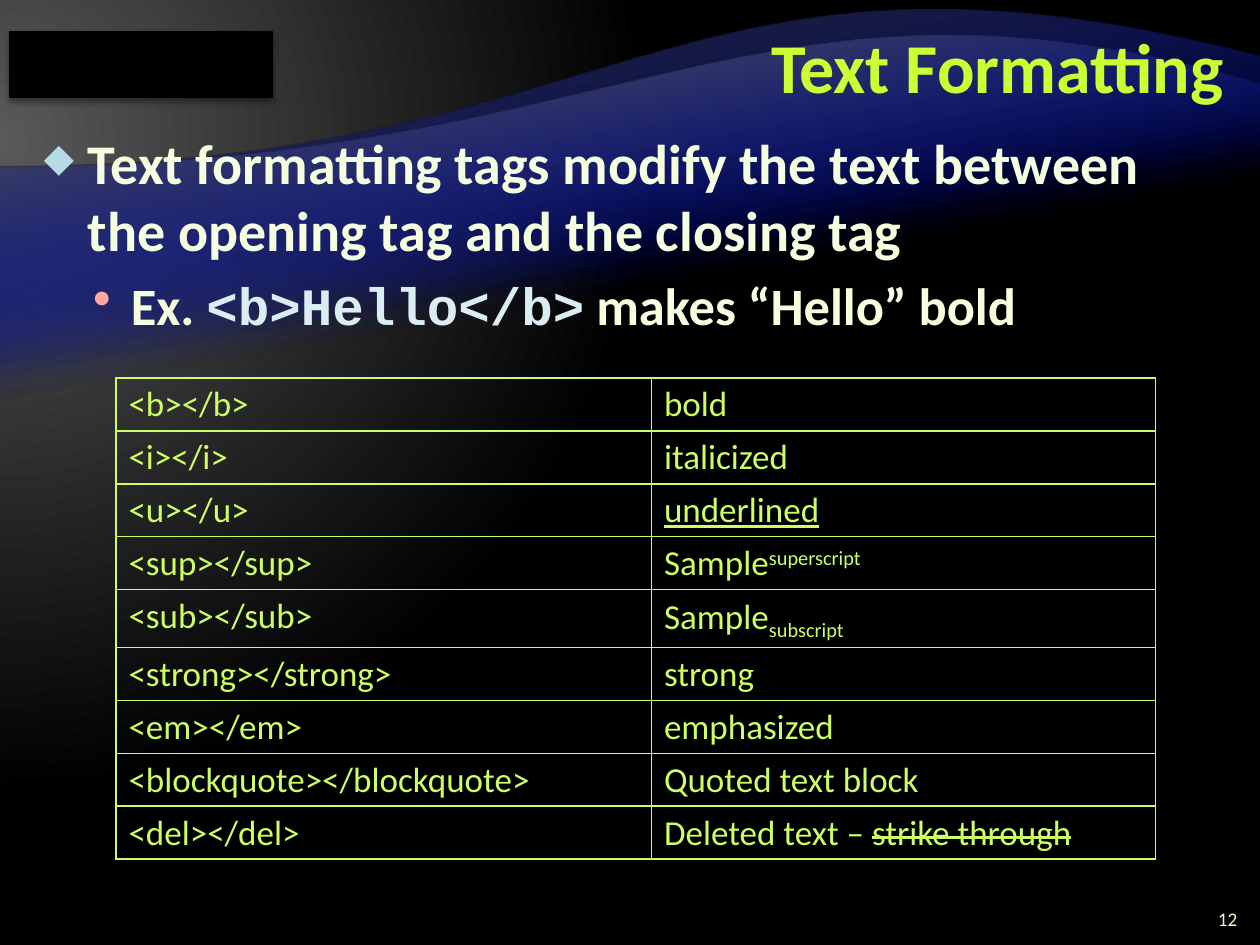
from dataclasses import dataclass, field

from pptx import Presentation
from pptx.dml.color import RGBColor
from pptx.enum.shapes import MSO_SHAPE
from pptx.enum.text import MSO_ANCHOR, PP_ALIGN
from pptx.oxml import parse_xml
from pptx.oxml.ns import nsdecls, qn
from pptx.util import Inches, Pt

RIGHT, LEFT = PP_ALIGN.RIGHT, PP_ALIGN.LEFT
TOP, MIDDLE = MSO_ANCHOR.TOP, MSO_ANCHOR.MIDDLE
RECTANGLE = MSO_SHAPE.RECTANGLE
COLORS = {
    "title": "CCFF33", "body": "F5FFE0", "code": "DAEDF2", "table": "CCFF66",
    "number": "EBFFC2", "diamond": "B5DBE5", "dot": "FFA9A0", "black": "000000",
    "gray": "595959", "dark": "262626", "blue": "000D9E",
}
SANS, MONO = "Calibri", "Courier New"
SLIDE_W, SLIDE_H = 10, 7.5


@dataclass
class Run:
    text: str
    format: dict = field(default_factory=dict)
    attributes: dict = field(default_factory=dict)


@dataclass
class Bullet:
    char: str
    color: str
    percent: int
    left: float
    hanging: float


@dataclass
class Wave:
    top: float
    bottom: float
    left_edge: float
    control: tuple
    edge_color: str


def xml(markup: str):
    name, rest = markup.split(" ", 1)
    return parse_xml(f"{name} {nsdecls('a')} {rest}")


def set_gradient(fill, parent, stops: list, direction: str) -> None:
    fill.solid()
    gs = "".join(
        f'<a:gs pos="{pos * 1000}"><a:srgbClr val="{COLORS[color]}">'
        f'<a:alpha val="{alpha * 1000}"/></a:srgbClr></a:gs>'
        for pos, color, alpha in stops
    )
    solid = parent.find(qn("a:solidFill"))
    parent.replace(solid, xml(f'<a:gradFill rotWithShape="1"><a:gsLst>{gs}</a:gsLst>{direction}</a:gradFill>'))


def add_wave(s, wave: Wave) -> None:
    def turned(x: float, y: float) -> tuple:
        return Inches(SLIDE_W - x), Inches(wave.top + wave.bottom - y)

    right_edge = (SLIDE_W, wave.top)
    corners = [(SLIDE_W, wave.bottom), (0, wave.bottom), (0, wave.left_edge), right_edge]
    points = [turned(*corner) for corner in corners]
    builder = s.shapes.build_freeform(*points[0])
    builder.add_line_segments(points[1:], close=True)
    sp = builder.convert_to_shape()
    sp.rotation = 180
    sp.shadow.inherit = False
    sp.line.fill.background()
    curve_points = [turned(5, wave.left_edge), turned(*wave.control), points[-1]]
    pts = "".join(f'<a:pt x="{x - sp.left}" y="{y - sp.top}"/>' for x, y in curve_points)
    spPr = sp._element.spPr
    line = spPr.findall(".//" + qn("a:lnTo"))[2]
    line.getparent().replace(line, xml(f"<a:cubicBezTo >{pts}</a:cubicBezTo>"))
    set_gradient(sp.fill, spPr, [(65, "blue", 0), (100, wave.edge_color, 100)],
                 '<a:lin ang="4800000" scaled="0"/>')


def add_run(p, run: Run, base: dict) -> None:
    r = p.add_run()
    r.text = run.text
    for name, value in {**base, **run.format}.items():
        if name == "color":
            r.font.color.rgb = RGBColor.from_string(COLORS[value])
        else:
            setattr(r.font, name, value)
    for name, value in run.attributes.items():
        r._r.get_or_add_rPr().set(name, value)


def add_bullet(p, bullet: Bullet) -> None:
    pPr = p._p.get_or_add_pPr()
    pPr.set("marL", str(Inches(bullet.left)))
    pPr.set("indent", str(-Inches(bullet.hanging)))
    for markup in (
        f'<a:buClr ><a:srgbClr val="{COLORS[bullet.color]}"/></a:buClr>',
        f'<a:buSzPct val="{bullet.percent * 1000}"/>',
        f'<a:buChar char="{bullet.char}"/>',
    ):
        pPr.append(xml(markup))


def add_textbox(s, box: tuple, anchor=TOP):
    tf = s.shapes.add_textbox(*map(Inches, box)).text_frame
    tf.word_wrap = True
    tf.vertical_anchor = anchor
    return tf


def add_line(s, box: tuple, text: str, base: dict, anchor=TOP):
    p = add_textbox(s, box, anchor).paragraphs[0]
    p.alignment = RIGHT
    add_run(p, Run(text), base)
    return p


def add_body(s) -> None:
    tf = add_textbox(s, (0.25, 0.97, 9.5, 6.28))
    base = {"name": SANS, "bold": True, "color": "body"}
    paragraphs = [
        (32, Bullet("◆", "diamond", 70, 0.35, 0.35),
         [Run("Text formatting tags modify the text between the opening tag and the closing tag")]),
        (30, Bullet("•", "dot", 100, 0.69, 0.3),
         [Run("Ex. "), Run("<b>Hello</b>", {"name": MONO, "color": "code"}),
          Run(" makes “Hello” bold")]),
    ]
    for i, (size, bullet, runs) in enumerate(paragraphs):
        p = tf.add_paragraph() if i else tf.paragraphs[0]
        add_bullet(p, bullet)
        if i:
            p.level = i
            p.space_before = Pt(6)
        for run in runs:
            add_run(p, run, {**base, "size": Pt(size)})


def style_cell(cell, runs: list) -> None:
    cell.fill.background()
    tcPr = cell._tc.get_or_add_tcPr()
    for i, side in enumerate(("lnL", "lnR", "lnT", "lnB")):
        tcPr.insert(i, xml(
            f'<a:{side} w="{Pt(1)}"><a:solidFill><a:srgbClr val="{COLORS["table"]}"/>'
            f"</a:solidFill></a:{side}>"))
    p = cell.text_frame.paragraphs[0]
    p.alignment = LEFT
    p.line_spacing = 0.95
    for run in runs:
        add_run(p, run, {"name": SANS, "size": Pt(20), "bold": False, "color": "table"})


def add_tag_table(s) -> None:
    rows = [
        ("b", [Run("bold")]),
        ("i", [Run("italicized")]),
        ("u", [Run("underlined", {"underline": True})]),
        ("sup", [Run("Sample"), Run("superscript", {}, {"baseline": "30000"})]),
        ("sub", [Run("Sample"), Run("subscript", {}, {"baseline": "-25000"})]),
        ("strong", [Run("strong")]),
        ("em", [Run("emphasized")]),
        ("blockquote", [Run("Quoted text block")]),
        ("del", [Run("Deleted text – "), Run("strike through", {}, {"strike": "sngStrike"})]),
    ]
    table = s.shapes.add_table(len(rows), 2, *map(Inches, (0.92, 3, 8.25, 3.78))).table
    table.first_row = table.horz_banding = False
    for column, width in zip(table.columns, (4.25, 4)):
        column.width = Inches(width)
    for i, (tag, sample) in enumerate(rows):
        style_cell(table.cell(i, 0), [Run(f"<{tag}></{tag}>")])
        style_cell(table.cell(i, 1), sample)


def add_corner_block(s) -> None:
    sp = s.shapes.add_shape(RECTANGLE, *map(Inches, (0.08, 0.25, 2.08, 0.52)))
    sp.fill.solid()
    sp.fill.fore_color.rgb = sp.line.color.rgb = RGBColor.from_string(COLORS["black"])
    sp.line.width = Pt(0.75)
    sp.shadow.inherit = False
    sp._element.spPr.find(qn("a:effectLst")).append(xml(
        f'<a:outerShdw blurRad="{Pt(4)}" dist="{Pt(2)}" dir="5400000">'
        f'<a:srgbClr val="{COLORS["black"]}"><a:alpha val="43000"/></a:srgbClr></a:outerShdw>'))


def main() -> None:
    prs = Presentation()
    prs.slide_width, prs.slide_height = Inches(SLIDE_W), Inches(SLIDE_H)
    s = prs.slides.add_slide(prs.slide_layouts[6])
    fill = s.background.fill
    fill.solid()
    set_gradient(fill, s._element.find(".//" + qn("p:bgPr")),
                 [(0, "gray", 100), (83, "black", 100)],
                 '<a:path path="circle"><a:fillToRect l="20000" t="30000" r="135000" b="100000"/></a:path>')
    waves = [Wave(0.45, 6.53, 1.33, (5.34, -0.75), "dark"),
             Wave(0.67, 5.57, 1.33, (5.98, -0.49), "gray")]
    for wave in waves * 2:
        add_wave(s, wave)
    title = add_line(s, (2.64, 0.08, 7.17, 0.99), "Text Formatting",
                     {"name": SANS, "size": Pt(40), "bold": True, "color": "title"}, MIDDLE)
    title.line_spacing = Pt(40)
    add_body(s)
    add_tag_table(s)
    add_line(s, (9.42, 7.17, 0.5, 0.25), "12",
             {"name": SANS, "size": Pt(11), "color": "number"}, MIDDLE)
    add_corner_block(s)
    prs.save("out.pptx")


if __name__ == "__main__":
    main()
